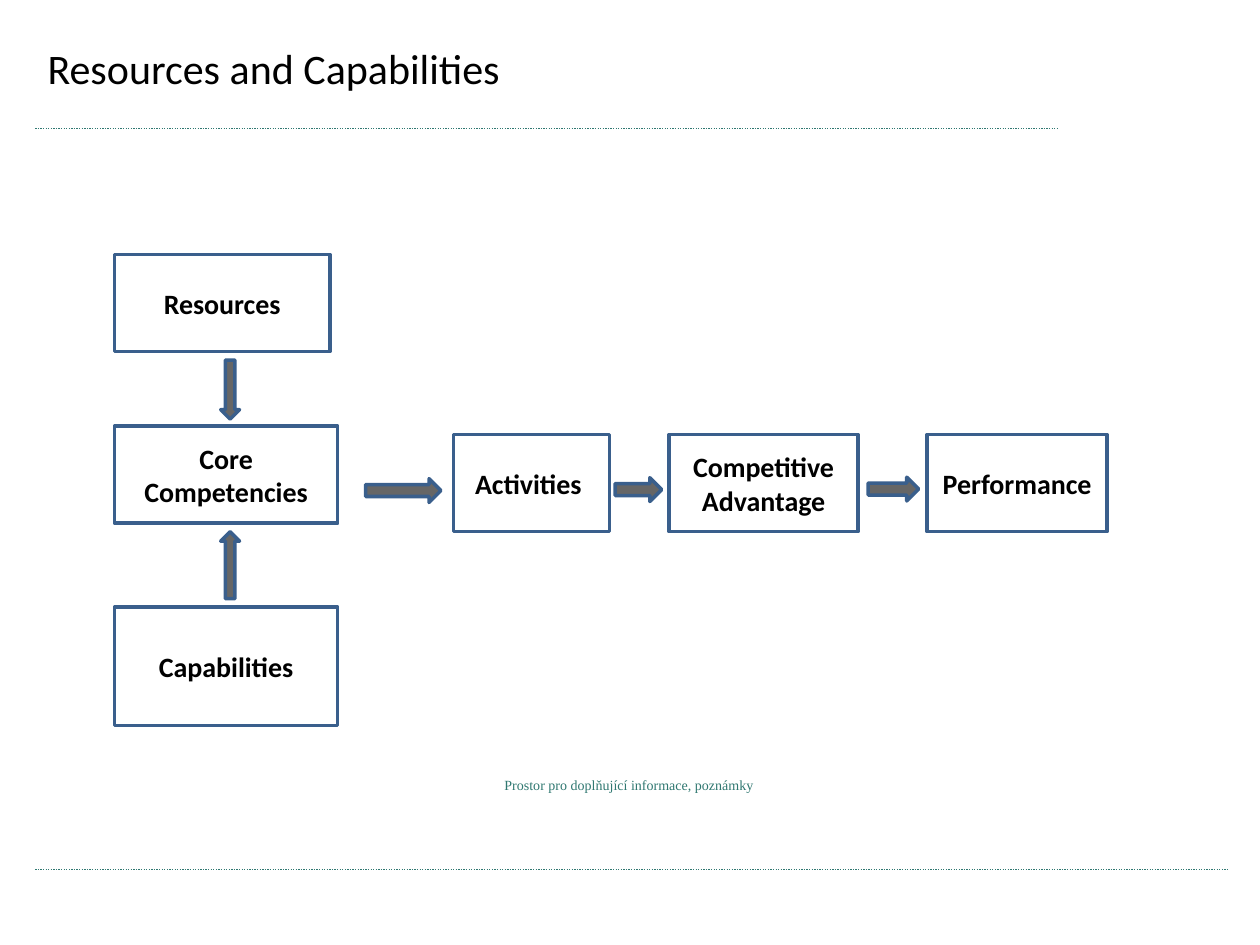
from lxml.etree import SubElement
from pptx import Presentation
from pptx.dml.color import RGBColor
from pptx.enum.dml import MSO_LINE
from pptx.enum.shapes import MSO_CONNECTOR, MSO_SHAPE
from pptx.enum.text import MSO_ANCHOR, PP_ALIGN
from pptx.oxml.ns import qn
from pptx.util import Cm, Pt

COLORS = {"rule": "307871", "border": "3A5F8C", "arrow": "666666", "text": "000000"}


class Diagram:
    font = "Calibri"
    border_width = Pt(2)

    def __init__(self, slide):
        self.shapes = slide.shapes

    def color(self, name):
        return RGBColor.from_string(COLORS[name])

    def add_words(self, frame, words, size, color="text", font=None, bold=False,
                  align=PP_ALIGN.CENTER, anchor=MSO_ANCHOR.TOP):
        frame.word_wrap = True
        frame.vertical_anchor = anchor
        paragraph = frame.paragraphs[0]
        paragraph.alignment = align
        run = paragraph.add_run()
        run.text = words
        run.font.name = font or self.font
        run.font.size = Pt(size)
        run.font.bold = bold
        run.font.color.rgb = self.color(color)

    def text(self, bounds, words, size, **style):
        label = self.shapes.add_textbox(*map(Cm, bounds))
        self.add_words(label.text_frame, words, size, **style)

    def rule(self, left, right, y):
        line = self.shapes.add_connector(
            MSO_CONNECTOR.STRAIGHT, Cm(left), Cm(y), Cm(right), Cm(y))
        line.line.color.rgb = self.color("rule")
        line.line.width = Pt(0.75)
        line.line.dash_style = MSO_LINE.ROUND_DOT
        SubElement(line._element.spPr, qn("a:effectLst"))

    def outlined(self, kind, bounds):
        shape = self.shapes.add_shape(kind, *map(Cm, bounds))
        shape.shadow.inherit = False
        shape.line.color.rgb = self.color("border")
        shape.line.width = self.border_width
        return shape

    def box(self, words, bounds):
        shape = self.outlined(MSO_SHAPE.RECTANGLE, bounds)
        shape.fill.background()
        self.add_words(shape.text_frame, words, 16, bold=True, anchor=MSO_ANCHOR.MIDDLE)

    def arrow(self, kind, bounds):
        shape = self.outlined(kind, bounds)
        shape.fill.solid()
        shape.fill.fore_color.rgb = self.color("arrow")


def main():
    deck = Presentation()
    deck.slide_width, deck.slide_height = Cm(25.4), Cm(19.05)
    diagram = Diagram(deck.slides.add_slide(deck.slide_layouts[6]))

    margin = 0.71
    diagram.rule(margin, 21.31, 2.59)
    diagram.rule(margin, 24.77, 17.53)
    diagram.text((7.49, 15.52, 10.39, 0.58), "Prostor pro doplňující informace, poznámky",
                 8, color="rule", font="Times New Roman")
    diagram.text((margin, 0.74, 12.6, 1.88), "Resources and Capabilities",
                 24, align=PP_ALIGN.LEFT)

    sources_left, chain_top, box_height = 2.31, 8.76, 1.96
    for words, top, width, height in (
        ("Resources", 5.13, 4.34, box_height),
        ("Core Competencies", 8.59, 4.5, box_height),
        ("Capabilities", 12.24, 4.5, 2.39),
    ):
        diagram.box(words, (sources_left, top, width, height))
    for words, left, width in (
        ("Activities ", 9.14, 3.15),
        ("Competitive Advantage", 13.49, 3.81),
        ("Performance ", 18.69, 3.63),
    ):
        diagram.box(words, (left, chain_top, width, box_height))

    for kind, top, length in (
        (MSO_SHAPE.DOWN_ARROW, 7.26, 1.19),
        (MSO_SHAPE.UP_ARROW, 10.72, 1.35),
    ):
        diagram.arrow(kind, (4.45, top, 0.38, length))
    for left, top, length in ((7.37, 9.65, 1.52), (12.4, 9.63, 0.94), (17.5, 9.62, 1.02)):
        diagram.arrow(MSO_SHAPE.RIGHT_ARROW, (left, top, length, 0.48))

    deck.save("out.pptx")


if __name__ == "__main__":
    main()
